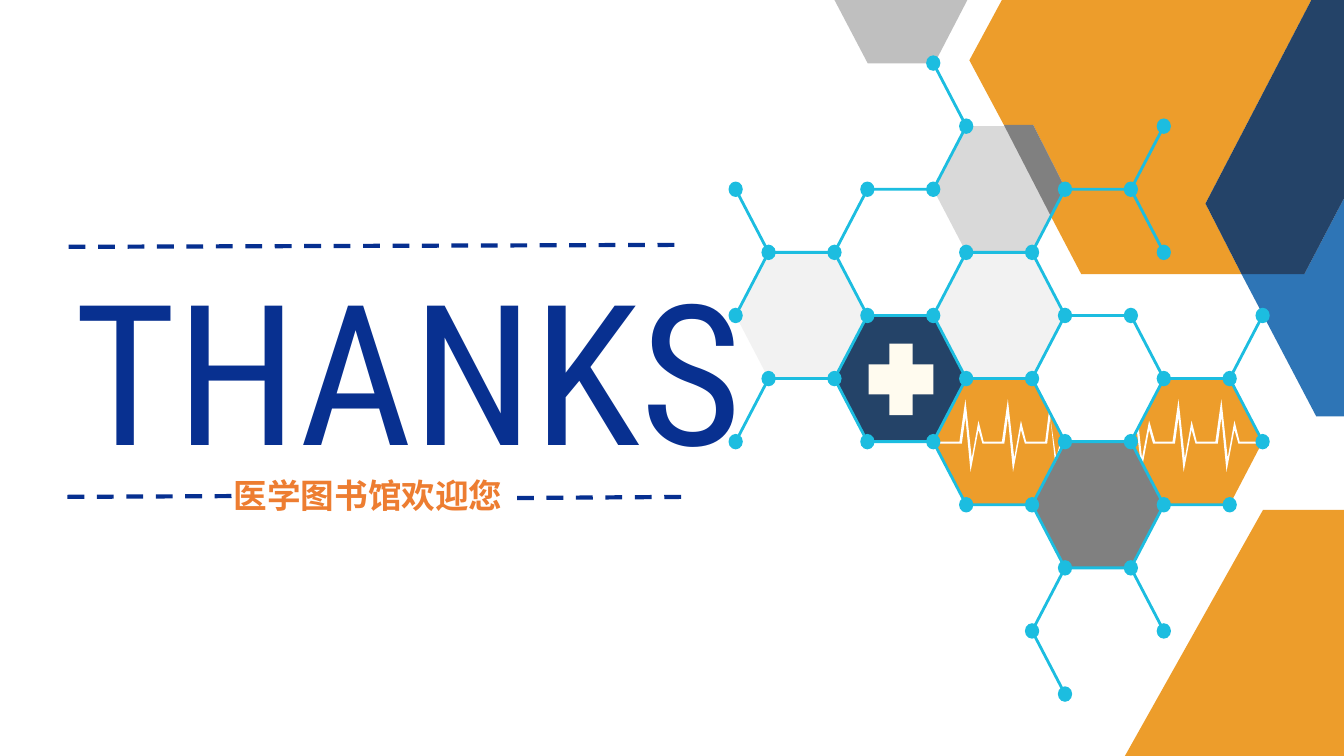
"""Build a closing slide with a hexagonal molecule lattice and a thank-you title."""
from lxml import etree
from pptx import Presentation
from pptx.dml.color import RGBColor
from pptx.enum.dml import MSO_LINE
from pptx.enum.shapes import MSO_CONNECTOR, MSO_SHAPE
from pptx.enum.text import MSO_ANCHOR, MSO_AUTO_SIZE, PP_ALIGN
from pptx.oxml.ns import qn
from pptx.util import Cm, Pt

STRAIGHT = MSO_CONNECTOR.STRAIGHT
CROSS, OVAL = MSO_SHAPE.CROSS, MSO_SHAPE.OVAL
DASH = MSO_LINE.DASH
TOP, LEFT = MSO_ANCHOR.TOP, PP_ALIGN.LEFT
NO_AUTOFIT = MSO_AUTO_SIZE.NONE

ORANGE = RGBColor(0xED, 0x9D, 0x2B)
NAVY = RGBColor(0x24, 0x43, 0x68)
BLUE = RGBColor(0x2E, 0x75, 0xB6)
CYAN = RGBColor(0x1C, 0xBD, 0xE0)
GREY = RGBColor(0x80, 0x80, 0x80)
SILVER = RGBColor(0xBF, 0xBF, 0xBF)
LIGHT_GREY = RGBColor(0xD9, 0xD9, 0xD9)
PALE_GREY = RGBColor(0xF2, 0xF2, 0xF2)
WHITE = RGBColor(0xFF, 0xFF, 0xFF)
IVORY = RGBColor(0xFF, 0xFB, 0xEF)
TITLE_BLUE = RGBColor(0x08, 0x30, 0x90)
RULE_BLUE = RGBColor(0x06, 0x2F, 0x90)
SUBTITLE_ORANGE = RGBColor(0xED, 0x7D, 0x31)

TITLE = ("THANKS", "Roboto Condensed", 140, False, TITLE_BLUE)
SUBTITLE = ("医学图书馆欢迎您", "Noto Sans CJK SC", 24, True, SUBTITLE_ORANGE)
TITLE_BOX = (1.63, 6.15, 17.45, 6.25)
SUBTITLE_BOX = (5.64, 11.84, 7.49, 1.27)
RULES = [
    ((1.73, 6.22), (17.15, 6.17)),
    ((1.7, 12.52), (5.92, 12.5)),
    ((13.03, 12.55), (17.25, 12.52)),
]

LATTICE_LEFT, LATTICE_TOP = 18.54, 1.59
COLUMN_STEP, ROW_STEP = 0.83, 1.59
NODE_WIDTH, NODE_HEIGHT = 0.36, 0.39
HEXAGON_CORNERS = [(0, 0), (1, -1), (2, -1), (3, 0), (2, 1), (1, 1)]
HEXAGONS = [
    ((4, 6), ORANGE), ((4, 4), PALE_GREY), ((4, 2), LIGHT_GREY), ((0, 4), PALE_GREY),
    ((6, 7), GREY), ((8, 6), ORANGE), ((2, 5), NAVY),
]
BONDS = [
    [(6, 7), (5, 7), (4, 6), (5, 5), (6, 5), (7, 6)],
    [(9, 3), (8, 2), (7, 2), (6, 3)],
    [(8, 2), (9, 1)],
    [(0, 6), (1, 5)],
    [(10, 5), (11, 4)],
    [(4, 2), (5, 1)],
    [(5, 1), (4, 0)],
    [(1, 3), (0, 2)],
    [(4, 6), (3, 6), (2, 5), (3, 4), (4, 4)],
    [(5, 5), (4, 4), (5, 3), (6, 3), (7, 4)],
    [(2, 3), (3, 2), (4, 2)],
    [(10, 7), (9, 7), (8, 6), (9, 5), (10, 5), (11, 6)],
    [(0, 4), (1, 3), (2, 3), (3, 4)],
    [(1, 5), (2, 5)],
    [(9, 5), (8, 4), (7, 4), (6, 5)],
    [(7, 10), (6, 9), (7, 8), (8, 8), (9, 9)],
    [(8, 8), (9, 7)],
    [(7, 8), (6, 7), (7, 6), (8, 6)],
]
PANELS = [
    (ORANGE, [(33.05, 0), (25.25, 0), (24.43, 1.52), (25.3, 3.15), (26.04, 3.15),
              (26.85, 4.75), (26.49, 5.46), (27.25, 6.91), (31.29, 6.91), (30.38, 5.13)]),
    (GREY, [(26.04, 3.15), (25.3, 3.15), (26.49, 5.46), (26.85, 4.75)]),
    (BLUE, [(33.87, 5), (32.87, 6.91), (31.29, 6.91), (33.17, 10.49), (33.87, 10.49)]),
    (NAVY, [(33.87, 0), (33.05, 0), (30.38, 5.13), (31.29, 6.91), (32.87, 6.91), (33.87, 5)]),
    (SILVER, [(24.38, 0), (21.03, 0), (21.87, 1.6), (23.55, 1.6)]),
    (ORANGE, [(33.87, 12.85), (31.83, 12.85), (28.35, 19.05), (33.87, 19.05)]),
]
CROSS_BOX = (21.89, 8.66, 1.63, 1.8)

PULSE_BASELINE = 11.13
BEAT_UPPER = [(-0.15, 0), (0, -1.07), (0.16, 0.41), (0.33, -0.53), (0.46, 0)]
BEAT_LOWER = [(-0.09, 0.05), (0, -0.61), (0.13, 0.76), (0.33, -0.3), (0.43, 0.05)]
PULSES = [
    {"start": [(23.52, 0.05), (23.52, 0)],
     "beats": [24.33, 25.4],
     "end": [(26.34, 0), (26.44, -0.81), (26.62, 0.41), (26.77, -0.18),
             (26.7, 0.3), (26.59, 0.53), (26.47, -0.61), (26.39, 0.05)]},
    {"start": [(29.06, 0.05), (28.96, -0.3), (28.8, 0.56), (28.73, 0.41), (28.65, -0.28),
               (28.7, -0.36), (28.78, 0.41), (28.96, -0.53), (29.11, 0)],
     "beats": [29.7, 30.78],
     "end": [(31.78, 0), (31.78, 0.05)]},
]


def lattice_point(column, row):
    """Return the place of a lattice vertex in centimetres."""
    units = column // 2 * 3 + column % 2
    return LATTICE_LEFT + units * COLUMN_STEP, LATTICE_TOP + row * ROW_STEP


def paint(shape, color):
    """Fill a shape without outline or shadow."""
    shape.shadow.inherit = False
    shape.fill.solid()
    shape.fill.fore_color.rgb = color
    shape.line.fill.background()


def add_outline(slide, points, close=True):
    """Add a freeform through points given in centimetres."""
    places = [(Cm(x), Cm(y)) for x, y in points]
    builder = slide.shapes.build_freeform(*places[0])
    builder.add_line_segments(places[1:], close=close)
    return builder.convert_to_shape()


def add_line(slide, start, end, color, width):
    """Add a straight connector without shadow."""
    ends = [Cm(value) for value in (*start, *end)]
    connector = slide.shapes.add_connector(STRAIGHT, *ends)
    connector.line.color.rgb = color
    connector.line.width = Pt(width)
    etree.SubElement(connector.element.spPr, qn("a:effectLst"))
    return connector


def add_bond(slide, points):
    """Draw a chain of bonds through lattice points."""
    if len(points) == 2:
        add_line(slide, *points, CYAN, 2)
        return
    shape = add_outline(slide, points, close=False)
    shape.shadow.inherit = False
    shape.fill.background()
    shape.line.color.rgb = CYAN
    shape.line.width = Pt(2)


def add_pulse(slide, pulse):
    """Draw a heartbeat trace as a thin white outline."""
    upper = [(apex + x, y) for apex in pulse["beats"] for x, y in BEAT_UPPER]
    lower = [(apex + x, y) for apex in pulse["beats"] for x, y in BEAT_LOWER]
    trace = pulse["start"] + upper + pulse["end"] + lower[::-1]
    paint(add_outline(slide, [(x, PULSE_BASELINE + y) for x, y in trace]), WHITE)


def write(shape, text, font_name, size, bold, color):
    """Write one styled line of text into a shape."""
    frame = shape.text_frame
    frame.word_wrap = False
    frame.auto_size = NO_AUTOFIT
    frame.vertical_anchor = TOP
    paragraph = frame.paragraphs[0]
    paragraph.alignment = LEFT
    run = paragraph.add_run()
    run.text = text
    run.font.name = font_name
    run.font.size = Pt(size)
    run.font.bold = bold
    run.font.color.rgb = color
    etree.SubElement(run.font._element, qn("a:ea"), typeface=font_name)


def main():
    """Assemble and save the slide."""
    presentation = Presentation()
    presentation.slide_width, presentation.slide_height = Cm(33.87), Cm(19.05)
    slide = presentation.slides.add_slide(presentation.slide_layouts[5])

    for (column, row), color in HEXAGONS:
        corners = [lattice_point(column + x, row + y) for x, y in HEXAGON_CORNERS]
        paint(add_outline(slide, corners), color)
    for color, points in PANELS:
        paint(add_outline(slide, points), color)
    for pulse in PULSES:
        add_pulse(slide, pulse)
    cross = slide.shapes.add_shape(CROSS, *map(Cm, CROSS_BOX))
    cross.adjustments[0] = 0.32
    paint(cross, IVORY)

    for bond in BONDS:
        add_bond(slide, [lattice_point(*vertex) for vertex in bond])
    for vertex in sorted({vertex for bond in BONDS for vertex in bond}):
        x, y = lattice_point(*vertex)
        box = (x - NODE_WIDTH / 2, y - NODE_HEIGHT / 2, NODE_WIDTH, NODE_HEIGHT)
        paint(slide.shapes.add_shape(OVAL, *map(Cm, box)), CYAN)

    for start, end in RULES:
        add_line(slide, start, end, RULE_BLUE, 3).line.dash_style = DASH
    title = slide.shapes.title
    title.left, title.top, title.width, title.height = map(Cm, TITLE_BOX)
    write(title, *TITLE)
    title.element.getparent().append(title.element)
    write(slide.shapes.add_textbox(*map(Cm, SUBTITLE_BOX)), *SUBTITLE)
    presentation.save("out.pptx")


if __name__ == "__main__":
    main()
